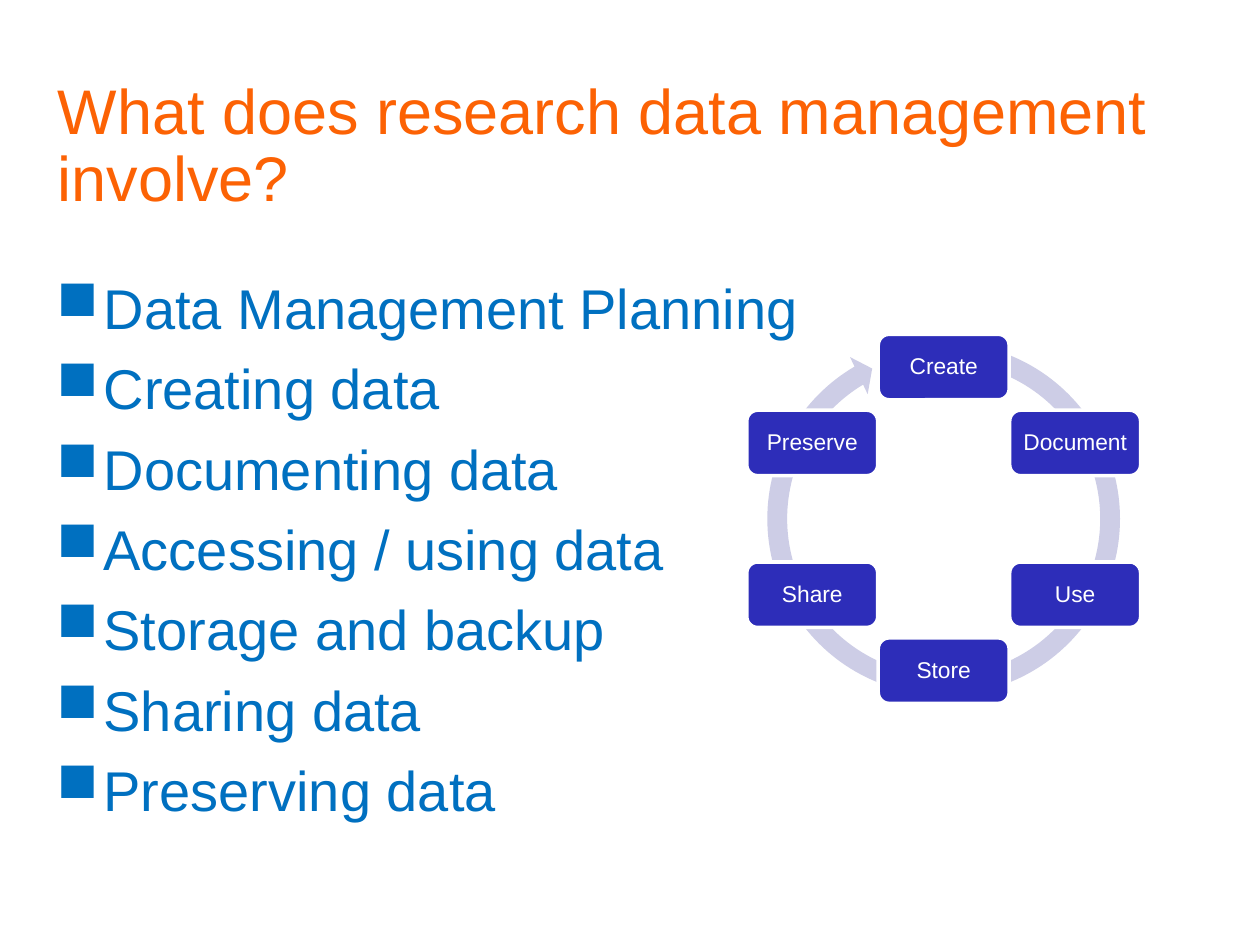
import dataclasses
import math

import pptx
import pptx.dml.color
import pptx.enum.shapes
import pptx.enum.text
import pptx.oxml
import pptx.oxml.ns
import pptx.util
from pptx.util import Cm, Pt

ANCHOR = pptx.enum.text.MSO_ANCHOR
ALIGN = pptx.enum.text.PP_ALIGN
SHAPE = pptx.enum.shapes.MSO_SHAPE


@dataclasses.dataclass(frozen=True)
class Theme:
    font: str = "Arial"
    heading: str = "FC6204"
    topic: str = "0070C0"
    stage: str = "2D2DB9"
    ring: str = "CDCDE6"
    white: str = "FFFFFF"
    heading_size: float = 36
    topic_size: float = 32
    stage_size: float = 13


THEME = Theme()

HEADING = "What does research data management involve?"
TOPICS = [
    "Data Management Planning",
    "Creating data",
    "Documenting data",
    "Accessing / using data",
    "Storage and backup",
    "Sharing data",
    "Preserving data",
]
STAGES = ["Create", "Document", "Use", "Store", "Share", "Preserve"]


def rgb(value):
    return pptx.dml.color.RGBColor.from_string(value)


def add_run(paragraph, text, size, color):
    run = paragraph.add_run()
    run.text = text
    run.font.name = THEME.font
    run.font.size = Pt(size)
    run.font.color.rgb = rgb(color)


def set_bullet(paragraph, indent):
    properties = paragraph._p.get_or_add_pPr()
    properties.set("marL", str(indent))
    properties.set("indent", str(-indent))
    bullet = pptx.oxml.parse_xml(
        f'<a:buChar {pptx.oxml.ns.nsdecls("a")} char="■"/>'
    )
    properties.append(bullet)


def place_heading(slide, left, top, width, height):
    heading = slide.shapes.title
    heading.left, heading.top = left, top
    heading.width, heading.height = width, height
    frame = heading.text_frame
    frame.word_wrap = True
    frame.auto_size = pptx.enum.text.MSO_AUTO_SIZE.NONE
    frame.vertical_anchor = ANCHOR.TOP
    line = frame.paragraphs[0]
    line.alignment = ALIGN.LEFT
    line.line_spacing = 0.88
    add_run(line, HEADING, THEME.heading_size, THEME.heading)


def place_topics(slide, left, top, width, height):
    frame = slide.shapes.add_textbox(left, top, width, height).text_frame
    frame.word_wrap = True
    for index, topic in enumerate(TOPICS):
        line = frame.add_paragraph() if index else frame.paragraphs[0]
        line.line_spacing = 1.04
        line.space_after = Pt(6)
        set_bullet(line, Cm(0.95))
        add_run(line, topic, THEME.topic_size, THEME.topic)


def place_stage(slide, label, left, top, width, height):
    stage = slide.shapes.add_shape(
        SHAPE.ROUNDED_RECTANGLE, left, top, width, height
    )
    stage.shadow.inherit = False
    stage.fill.solid()
    stage.fill.fore_color.rgb = rgb(THEME.stage)
    stage.line.color.rgb = rgb(THEME.white)
    stage.line.width = Pt(2)
    frame = stage.text_frame
    frame.word_wrap = True
    frame.vertical_anchor = ANCHOR.MIDDLE
    frame.margin_left = frame.margin_right = Cm(0.13)
    frame.margin_top = frame.margin_bottom = Cm(0.13)
    line = frame.paragraphs[0]
    line.alignment = ALIGN.CENTER
    line.line_spacing = 0.9
    add_run(line, label, THEME.stage_size, THEME.white)


def place_cycle(slide, left, top, width, height):
    center_x, center_y = left + width // 2, top + height // 2
    ring = slide.shapes.add_shape(
        SHAPE.CIRCULAR_ARROW, center_x - height // 2, top, height, height
    )
    ring.shadow.inherit = False
    ring.fill.solid()
    ring.fill.fore_color.rgb = rgb(THEME.ring)
    ring.line.fill.background()
    for index, value in enumerate([0.053, 3.126, 143.608, 170.498, 0.055]):
        ring.adjustments[index] = value

    stage_width, stage_height = Cm(2.64), Cm(1.32)
    radius = Cm(3.06)
    for index, label in enumerate(STAGES):
        angle = math.tau * index / len(STAGES)
        x = center_x + radius * math.sin(angle) - stage_width / 2
        y = center_y - radius * math.cos(angle) - stage_height / 2
        place_stage(slide, label, int(x), int(y), stage_width, stage_height)


def main():
    deck = pptx.Presentation()
    deck.slide_width, deck.slide_height = Cm(25.4), Cm(19.05)
    slide = deck.slides.add_slide(deck.slide_layouts.get_by_name("Title Only"))
    place_heading(slide, Cm(0.91), Cm(1.52), Cm(22.86), Cm(2.57))
    place_topics(slide, Cm(0.89), Cm(5.33), Cm(23.39), Cm(12.04))
    place_cycle(slide, Cm(15.06), Cm(6.69), Cm(7.93), Cm(7.54))
    deck.save("out.pptx")


if __name__ == "__main__":
    main()
